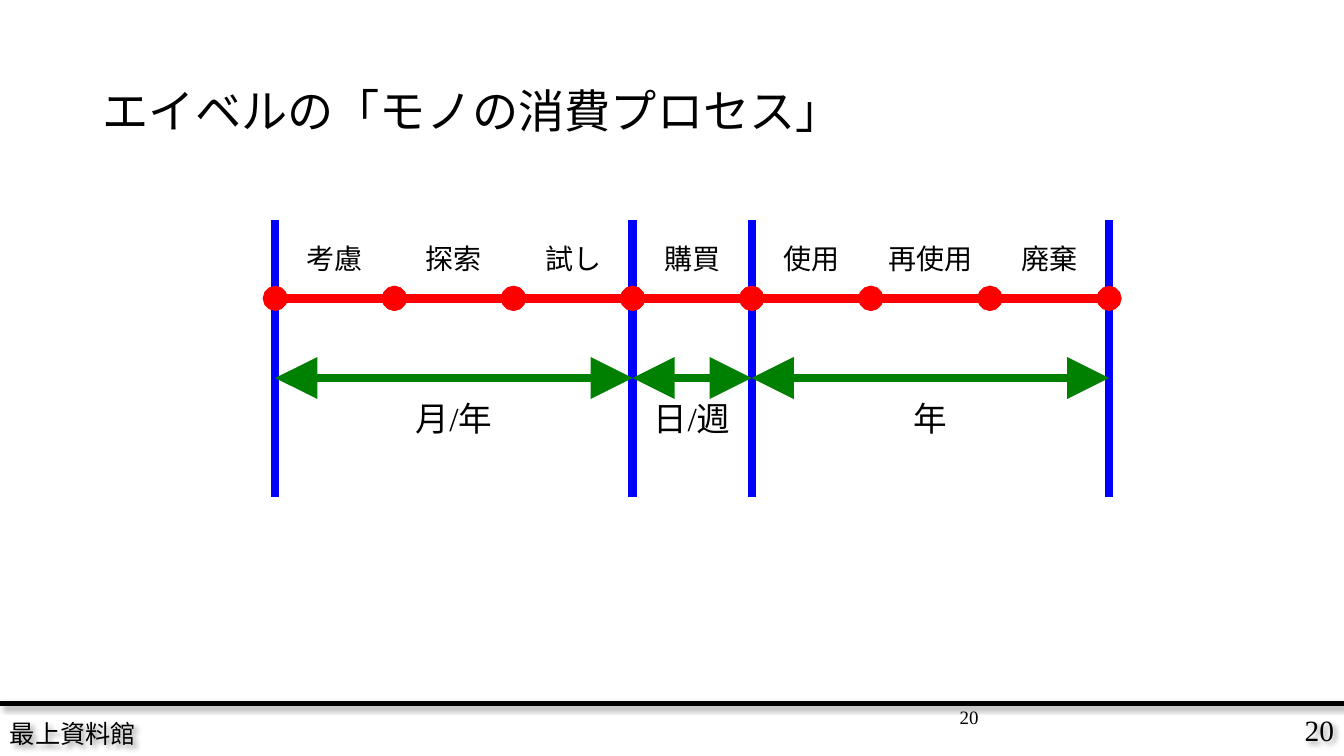
"""Build a slide showing the consumption process as a timeline of stages."""
from dataclasses import dataclass

from lxml import etree
from pptx import Presentation
from pptx.dml.color import RGBColor
from pptx.enum.shapes import MSO_CONNECTOR
from pptx.enum.text import MSO_ANCHOR, PP_ALIGN
from pptx.oxml.ns import qn
from pptx.shapes.base import BaseShape
from pptx.slide import Slide
from pptx.util import Inches, Pt

BLACK = RGBColor(0x00, 0x00, 0x00)
BLUE = RGBColor(0x00, 0x00, 0xFF)
RED = RGBColor(0xFF, 0x00, 0x00)
GREEN = RGBColor(0x00, 0x80, 0x00)
LEFT, CENTER, RIGHT = PP_ALIGN.LEFT, PP_ALIGN.CENTER, PP_ALIGN.RIGHT
TOP, MIDDLE = MSO_ANCHOR.TOP, MSO_ANCHOR.MIDDLE
STRAIGHT = MSO_CONNECTOR.STRAIGHT
LATIN = "Times New Roman"
JAPANESE = "Noto Sans CJK JP"

WIDTH, HEIGHT = 13.33, 7.5
STAGES = ["考慮", "探索", "試し", "購買", "使用", "再使用", "廃棄"]
START, END = 2.73, 11.0
STEP = (END - START) / len(STAGES)
LABEL_TOP, LABEL_HEIGHT = 2.17, 0.79
STAGE_Y, SPAN_Y = 2.96, 3.75
BAR_TOP, BAR_BOTTOM = 2.18, 4.93
FOOTER_Y = 6.98


@dataclass(frozen=True)
class Label:
    text: str
    left: float
    top: float
    width: float
    height: float
    size: float
    align: PP_ALIGN = LEFT
    anchor: MSO_ANCHOR = MIDDLE
    font: str = LATIN
    spacing: float = 1.0
    shadow: bool = False


@dataclass(frozen=True)
class Line:
    x1: float
    y1: float
    x2: float
    y2: float
    color: RGBColor
    weight: float = 6
    ends: str = ""
    end_size: str = "med"
    shadow: bool = False


@dataclass(frozen=True)
class Span:
    text: str
    first: int
    last: int


SPANS = [Span("月/年", 0, 3), Span("日/週", 3, 4), Span("年", 4, 7)]


def stage_x(index: float) -> float:
    """Return the horizontal position of a stage boundary."""
    return START + index * STEP


def set_effects(shape: BaseShape, shadow: bool) -> None:
    """Give the shape a soft drop shadow or an empty effect list."""
    effects = etree.SubElement(shape._element.spPr, qn("a:effectLst"))
    if shadow:
        outer = etree.SubElement(effects, qn("a:outerShdw"), blurRad=str(Pt(4)),
                                 dist=str(Pt(3)), dir=str(45 * 60000))
        color = etree.SubElement(outer, qn("a:srgbClr"), val=str(BLACK))
        etree.SubElement(color, qn("a:alpha"), val="40000")


def add_label(s: Slide, label: Label) -> None:
    """Add a text box holding one run."""
    sp = s.shapes.add_textbox(Inches(label.left), Inches(label.top),
                              Inches(label.width), Inches(label.height))
    set_effects(sp, label.shadow)
    tf = sp.text_frame
    tf.word_wrap = True
    tf.vertical_anchor = label.anchor
    p = tf.paragraphs[0]
    p.alignment = label.align
    p.line_spacing = label.spacing
    r = p.add_run()
    r.text = label.text
    r.font.name = label.font
    r.font.size = Pt(label.size)
    r.font.color.rgb = BLACK
    etree.SubElement(r.font._element, qn("a:ea"), typeface=JAPANESE)


def add_line(s: Slide, line: Line) -> None:
    """Add a straight line, with matching ends where they are named."""
    sp = s.shapes.add_connector(STRAIGHT, Inches(line.x1), Inches(line.y1),
                                Inches(line.x2), Inches(line.y2))
    sp.line.color.rgb = line.color
    sp.line.width = Pt(line.weight)
    if line.ends:
        ln = sp.line._get_or_add_ln()
        for tag in ("a:headEnd", "a:tailEnd"):
            etree.SubElement(ln, qn(tag), type=line.ends,
                             w=line.end_size, len=line.end_size)
    set_effects(sp, line.shadow)


def add_footer(s: Slide) -> None:
    """Add the bottom rule, the archive name and the page number."""
    add_label(s, Label("20", 11.55, FOOTER_Y, 1.78, 0.51, 21, RIGHT, shadow=True))
    add_label(s, Label("最上資料館", 0, 7.05, 3.6, 0.45, 18, shadow=True))
    add_line(s, Line(0, FOOTER_Y, WIDTH, FOOTER_Y, BLACK, 3, shadow=True))


def add_timeline(s: Slide) -> None:
    """Add the stages, the phase borders and the time spans."""
    for i, stage in enumerate(STAGES):
        add_label(s, Label(stage, stage_x(i), LABEL_TOP, STEP, LABEL_HEIGHT, 20, CENTER))
    for border in [0] + [span.last for span in SPANS]:
        x = stage_x(border)
        add_line(s, Line(x, BAR_BOTTOM, x, BAR_TOP, BLUE))
    for i in range(len(STAGES)):
        add_line(s, Line(stage_x(i), STAGE_Y, stage_x(i + 1), STAGE_Y, RED, ends="oval"))
    for span in SPANS:
        add_line(s, Line(stage_x(span.last), SPAN_Y, stage_x(span.first), SPAN_Y,
                         GREEN, ends="triangle", end_size="lg"))
        left = stage_x((span.first + span.last - 1) / 2)
        add_label(s, Label(span.text, left, SPAN_Y, STEP, LABEL_HEIGHT, 24, CENTER))


def main() -> None:
    """Build and save the presentation."""
    prs = Presentation()
    prs.slide_width, prs.slide_height = Inches(WIDTH), Inches(HEIGHT)
    s = prs.slides.add_slide(prs.slide_layouts[6])
    add_footer(s)
    add_label(s, Label("エイベルの「モノの消費プロセス」", 0.92, 0.4, 11.5, 1.45, 33,
                       font=JAPANESE, spacing=0.9))
    add_label(s, Label("20", 9.42, 6.95, 2.25, 0.4, 13.5, anchor=TOP))
    add_timeline(s)
    prs.save("out.pptx")


if __name__ == "__main__":
    main()
